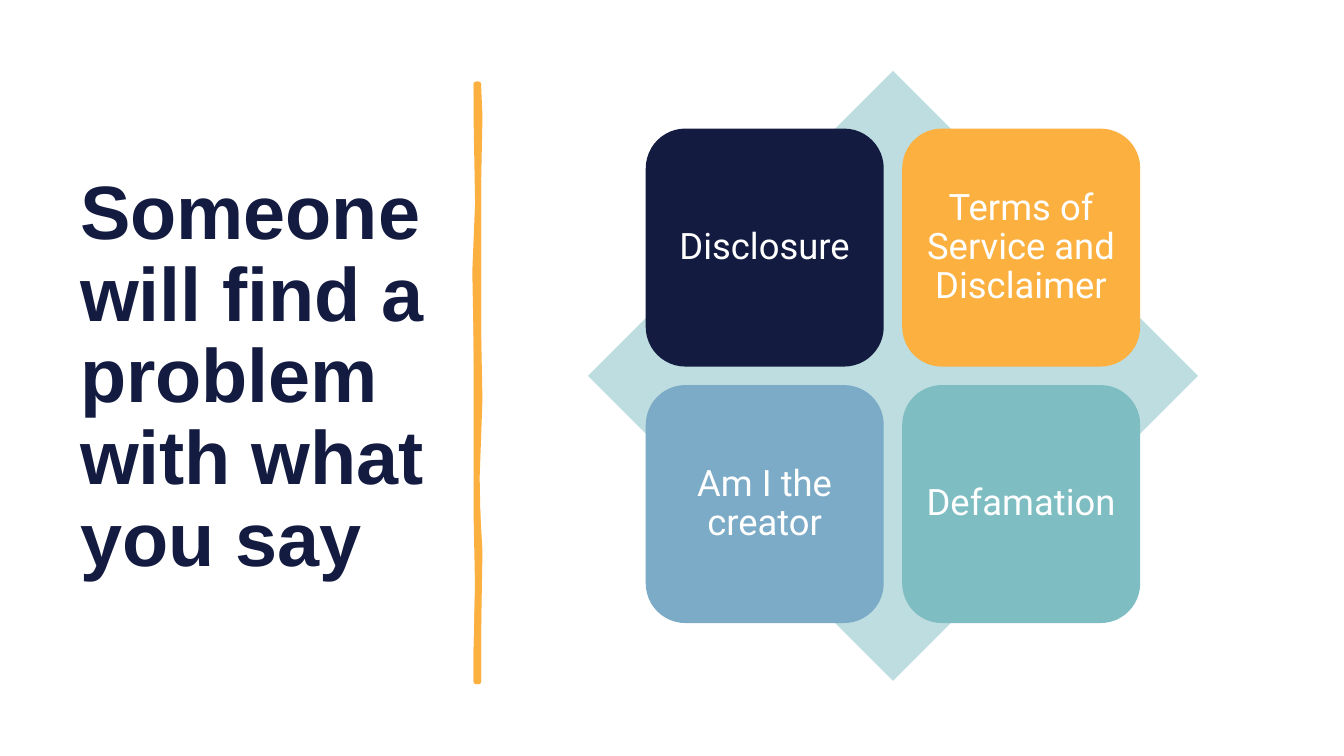
from typing import NamedTuple

from lxml import etree
from pptx import Presentation
from pptx.dml.color import RGBColor
from pptx.enum.shapes import MSO_SHAPE as Preset
from pptx.enum.text import MSO_ANCHOR as Anchor, MSO_AUTO_SIZE as AutoSize, PP_ALIGN as Align
from pptx.oxml.ns import qn
from pptx.shapes.autoshape import Shape
from pptx.slide import Slide
from pptx.util import Pt

NAVY, ORANGE, BLUE, TEAL, WHITE = "141B41", "FBB040", "7BABC7", "7EBDC2", "FFFFFF"

DIAMOND_LEFT, DIAMOND_TOP, DIAMOND_SIZE = 420, 50.6, 435.7
TILE_SIZE, TILE_PITCH = 170, 183.2

RULE_TOP, RULE_BOTTOM = 60.5, 486.7
RULE_RIGHT, RULE_LEFT = 342, 340.5


class Tile(NamedTuple):
    text: str
    color: str
    column: int
    row: int


class Bend(NamedTuple):
    """One stretch of an edge: where it ends, and how far its middle leans sideways."""
    end_y: float
    lean: float


class Stroke(NamedTuple):
    right: list[Bend]
    left: list[Bend]


TILES = [
    Tile("Disclosure", NAVY, 0, 0),
    Tile("Terms of Service and Disclaimer", ORANGE, 1, 0),
    Tile("Am I the creator", BLUE, 0, 1),
    Tile("Defamation", TEAL, 1, 1),
]

STROKES = [
    Stroke(
        right=[Bend(105.1, 1.1), Bend(162.7, -0.3), Bend(211.7, -0.3), Bend(256.3, 0.5),
               Bend(313.9, 0.5), Bend(367.2, -1.9), Bend(420.5, 1.1), Bend(RULE_BOTTOM, -0.3)],
        left=[Bend(441.4, -0.3), Bend(401, 0.5), Bend(343.4, -0.3), Bend(298.8, -0.5),
              Bend(241.2, 0), Bend(180, 0), Bend(130.3, 0.8), Bend(RULE_TOP, 0.3)],
    ),
    Stroke(
        right=[Bend(109.4, -0.8), Bend(149.8, 0.3), Bend(211.7, 0), Bend(260.6, -0.3),
               Bend(309.6, 1.1), Bend(371.5, -0.8), Bend(416.2, -0.3), Bend(RULE_BOTTOM, 0)],
        left=[Bend(441.4, -0.5), Bend(388.1, 0.5), Bend(339.1, 0.3), Bend(277.9, 0.3),
              Bend(216, -0.8), Bend(171.4, -1.1), Bend(118.1, 0.5), Bend(RULE_TOP, 0)],
    ),
]


def rgb(color: str) -> RGBColor:
    return RGBColor.from_string(color)


def fill_shape(shape: Shape, color: str) -> None:
    shape.shadow.inherit = False
    shape.fill.solid()
    shape.fill.fore_color.rgb = rgb(color)
    shape.line.fill.background()


def edge_points(x: float, start_y: float, bends: list[Bend]) -> list[tuple[float, float]]:
    """Return both ends of an edge and the leaning middle of each stretch."""
    points = [(x, start_y)]
    for bend in bends:
        points.append((x + bend.lean, (start_y + bend.end_y) / 2))
        start_y = bend.end_y
    return points + [(x, start_y)]


def add_rule(slide: Slide) -> None:
    builder = slide.shapes.build_freeform(RULE_RIGHT, RULE_TOP, scale=float(Pt(1)))
    for index, stroke in enumerate(STROKES):
        if index:
            builder.move_to(RULE_RIGHT, RULE_TOP)
        points = edge_points(RULE_RIGHT, RULE_TOP, stroke.right)
        points += edge_points(RULE_LEFT, RULE_BOTTOM, stroke.left)
        builder.add_line_segments(points[1:], close=True)
    shape = builder.convert_to_shape()
    fill_shape(shape, ORANGE)
    shape.line.color.rgb = rgb(ORANGE)
    shape.line.width = Pt(3.25)


def add_diamond(slide: Slide) -> None:
    shape = slide.shapes.add_shape(Preset.DIAMOND, Pt(DIAMOND_LEFT), Pt(DIAMOND_TOP),
                                   Pt(DIAMOND_SIZE), Pt(DIAMOND_SIZE))
    fill_shape(shape, TEAL)
    color = shape.fill._xPr.find(qn("a:solidFill"))[0]
    etree.SubElement(color, qn("a:alpha"), val="50000")


def add_tile(slide: Slide, tile: Tile) -> None:
    margin = (DIAMOND_SIZE - TILE_PITCH - TILE_SIZE) / 2
    left = DIAMOND_LEFT + margin + tile.column * TILE_PITCH
    top = DIAMOND_TOP + margin + tile.row * TILE_PITCH
    shape = slide.shapes.add_shape(Preset.ROUNDED_RECTANGLE, Pt(left), Pt(top),
                                   Pt(TILE_SIZE), Pt(TILE_SIZE))
    fill_shape(shape, tile.color)
    frame = shape.text_frame
    frame.word_wrap = True
    frame.vertical_anchor = Anchor.MIDDLE
    frame.margin_left = frame.margin_right = frame.margin_top = frame.margin_bottom = Pt(7.8)
    paragraph = frame.paragraphs[0]
    paragraph.text = tile.text
    paragraph.alignment = Align.CENTER
    paragraph.line_spacing = 0.9
    paragraph.font.name = "Roboto"
    paragraph.font.size = Pt(26)
    paragraph.font.color.rgb = rgb(WHITE)


def format_title(slide: Slide) -> None:
    title = slide.shapes.title
    title.left, title.top, title.width, title.height = Pt(50), Pt(50.2), Pt(269), Pt(440)
    frame = title.text_frame
    frame.word_wrap = True
    frame.auto_size = AutoSize.NONE
    frame.vertical_anchor = Anchor.MIDDLE
    paragraph = frame.paragraphs[0]
    paragraph.text = "Someone will find a problem with what you say"
    paragraph.alignment = Align.LEFT
    paragraph.line_spacing = 0.9
    paragraph.font.name = "Arial"
    paragraph.font.size = Pt(54)
    paragraph.font.bold = True
    paragraph.font.color.rgb = rgb(NAVY)


def main() -> None:
    presentation = Presentation()
    presentation.slide_width, presentation.slide_height = Pt(960), Pt(540)
    slide = presentation.slides.add_slide(presentation.slide_layouts[5])
    format_title(slide)
    add_rule(slide)
    add_diamond(slide)
    for tile in TILES:
        add_tile(slide, tile)
    presentation.save("out.pptx")


if __name__ == "__main__":
    main()
